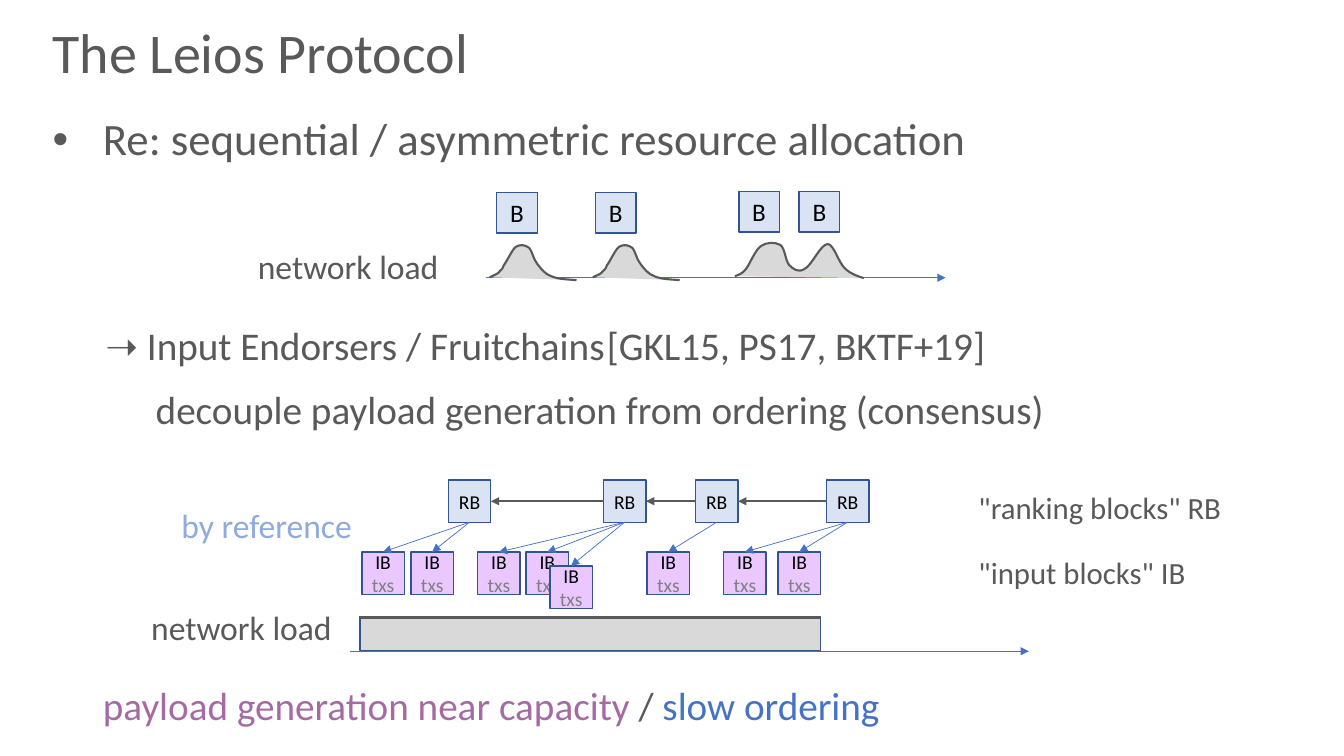
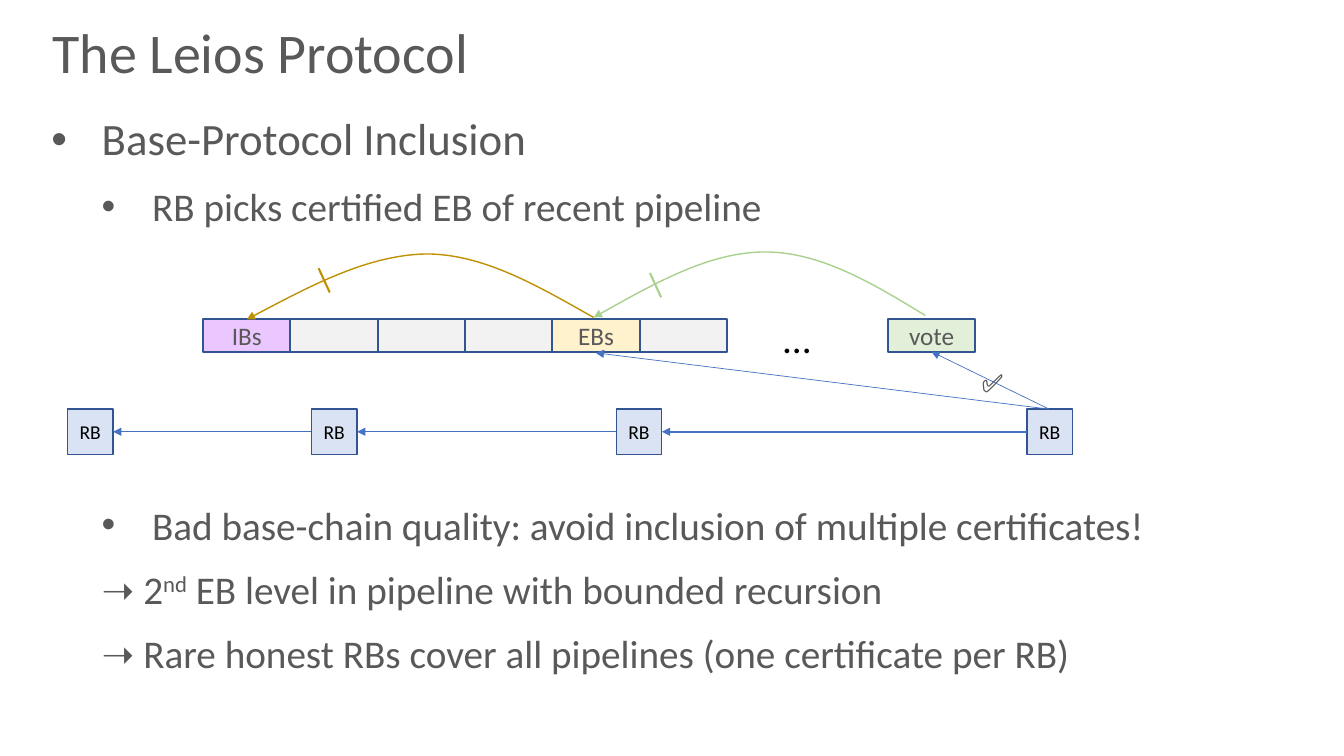
"""Build two slides on the Leios protocol: input endorsers and base-protocol inclusion."""
import pptx
import pptx.dml.color
import pptx.enum.shapes
import pptx.enum.text
import pptx.oxml
import pptx.oxml.ns
import pptx.util
from lxml import etree

Cm = pptx.util.Cm
Pt = pptx.util.Pt
rgb = pptx.dml.color.RGBColor.from_string
qn = pptx.oxml.ns.qn
ALIGN = pptx.enum.text.PP_ALIGN
MIDDLE = pptx.enum.text.MSO_ANCHOR.MIDDLE
RECT = pptx.enum.shapes.MSO_SHAPE.RECTANGLE
STRAIGHT = pptx.enum.shapes.MSO_CONNECTOR.STRAIGHT

GREY, BLACK, BLUE, NAVY = "595959", "000000", "4472C4", "325491"
PALE_BLUE, LILAC, LOAD, EMPTY = "DAE3F3", "EAC7FF", "D9D9D9", "F2F2F2"
GOLD, GREEN = "BF9000", "A9D18E"


def style(r, size, color):
    r.font.name = "Calibri"
    r.font.size = Pt(size)
    r.font.color.rgb = rgb(color)


def stroke(sp, color, width, arrow=False):
    sp.line.color.rgb = rgb(color)
    sp.line.width = Pt(width)
    spPr = sp._element.spPr
    if arrow:
        etree.SubElement(spPr.find(qn("a:ln")), qn("a:tailEnd"), type="triangle")
    etree.SubElement(spPr, qn("a:effectLst"))


prs = pptx.Presentation()
prs.slide_width, prs.slide_height = Cm(33.87), Cm(19.05)

# level, size, left margin, first-line indent, space after, runs
bodies = [
    (1.07, [
        (0, 32, 1.27, -1.27, 115, [("Re: sequential / asymmetric resource allocation", GREY)]),
        (0, 28, 0, 1.33, 11.5,
         [("➝ Input Endorsers / Fruitchains\t[GKL15, PS17, BKTF+19]", GREY)]),
        (1, 28, 2.6, 0, 178.5, [("decouple payload generation from ordering (consensus)", GREY)]),
        (1, 28, 1.27, 0, 18, [("payload generation near capacity ", "A56AA4"), ("/ ", GREY),
                              ("slow ordering", BLUE)]),
    ]),
    (1.04, [
        (0, 32, 1.27, -1.27, 12, [("Base-Protocol Inclusion", GREY)]),
        (1, 28, 2.54, -1.27, 194, [("RB picks certified EB of recent pipeline", GREY)]),
        (1, 28, 2.54, -1.27, 12.5,
         [("Bad base-chain quality: avoid inclusion of multiple certificates!", GREY)]),
        (1, 28, 1.27, 0, 12, [("➝ 2", GREY), ("nd", GREY),
                              (" EB level in pipeline with bounded recursion", GREY)]),
        (1, 28, 1.27, 0, 12,
         [("➝ Rare honest RBs cover all pipelines (one certificate per RB)", GREY)]),
    ]),
]

for body_left, body in bodies:
    s = prs.slides.add_slide(prs.slide_layouts[1])
    title, content = s.placeholders
    for sp, left, top, height in ((title, 1.07, 0, 2.8), (content, body_left, 2.82, 16.23)):
        sp.left, sp.top, sp.width, sp.height = Cm(left), Cm(top), Cm(32.8), Cm(height)
        sp.text_frame.word_wrap = True
        sp.text_frame.auto_size = pptx.enum.text.MSO_AUTO_SIZE.NONE
    tf = title.text_frame
    tf.text = "The Leios Protocol"
    tf.vertical_anchor = MIDDLE
    p = tf.paragraphs[0]
    p.alignment = ALIGN.LEFT
    p.line_spacing = 0.9
    style(p.runs[0], 40, GREY)

    tf = content.text_frame
    for i, (level, size, margin, indent, after, runs) in enumerate(body):
        p = tf.add_paragraph() if i else tf.paragraphs[0]
        p.level = level
        pPr = p._p.get_or_add_pPr()
        pPr.set("marL", str(Cm(margin)))
        pPr.set("indent", str(Cm(indent)))
        if indent < 0:
            etree.SubElement(pPr, qn("a:buChar"), char="•")
        else:
            etree.SubElement(pPr, qn("a:buNone"))
            tabs = etree.SubElement(pPr, qn("a:tabLst"))
            etree.SubElement(tabs, qn("a:tab"), pos=str(Cm(21.65)), algn="l")
        p.line_spacing = 1.0 if level else 0.9
        p.space_before, p.space_after = Pt(0), Pt(after)
        for text, color in runs:
            r = p.add_run()
            r.text = text
            style(r, size, color)
            if text == "nd":
                r._r.get_or_add_rPr().set("baseline", "30000")

load, inclusion = prs.slides

ranking = [11.3, 15.21, 17.53, 20.83]
inputs = [(x, 13.91) for x in (9.12, 10.36, 12.04, 13.26, 16.31, 18.24, 19.61)] + [(13.86, 14.26)]
references = [(0, 0), (0, 1), (1, 2), (1, 3), (1, 7), (2, 4), (3, 5), (3, 6)]
chain = [1.7, 7.85, 15.53, 25.88]
pipeline = [("IBs", LILAC), ("", EMPTY), ("", EMPTY), ("", EMPTY), ("EBs", "FFF2CC"), ("", EMPTY)]

hump = [(0, 6.99), (0.11, 6.93), (0.21, 6.91), (0.26, 6.83), (0.33, 6.78), (0.31, 6.78),
        (0.36, 6.68), (0.44, 6.58), (0.56, 6.3), (0.66, 6.22), (0.79, 6.15), (0.89, 6.17),
        (1, 6.25), (1.07, 6.32), (1.1, 6.53), (1.2, 6.65), (1.3, 6.78), (1.4, 6.91),
        (1.55, 6.96), (1.73, 7.04), (1.96, 7.04), (2.19, 7.06)]
double_hump = [(0, 6.96), (0.08, 6.93), (0.18, 6.91), (0.28, 6.78), (0.38, 6.65), (0.51, 6.3),
               (0.66, 6.2), (0.79, 6.1), (1.02, 6.1), (1.14, 6.17), (1.27, 6.25), (1.27, 6.58),
               (1.37, 6.68), (1.47, 6.78), (1.6, 6.88), (1.75, 6.78), (1.93, 6.71), (2.16, 6.15),
               (2.34, 6.15), (2.49, 6.15), (2.62, 6.63), (2.77, 6.76), (2.92, 6.91), (3.1, 6.96),
               (3.25, 7.01)]
eb_arc = [(0, 8), (-1.4, 7.21), (-2.77, 6.4), (-4.22, 6.4), (-5.69, 6.43), (-7.21, 7.24),
          (-8.74, 8.05)]
vote_arc = [(0, 7.95), (-1.33, 7.14), (-2.64, 6.35), (-4.04, 6.35), (-5.44, 6.35),
            (-6.91, 7.19), (-8.36, 8)]

boxes = [(load, x, y, 1.02, 1.02, PALE_BLUE, 1, "B", 18, BLACK)
         for x, y in ((12.52, 4.85), (15.01, 4.85), (18.62, 4.83), (20.14, 4.83))]
boxes += [(load, x, y, 1.07, 1.07, LILAC, 1, "IB\ntxs", 14, BLACK) for x, y in inputs]
boxes += [(load, x, 12.1, 1.07, 1.07, PALE_BLUE, 1, "RB", 14, BLACK) for x in ranking]
boxes += [(load, 9.07, 15.54, 11.61, 0.86, LOAD, 1, "", 14, BLACK)]
boxes += [(inclusion, 5.12 + 2.2 * i, 8.03, 2.2, 0.84, fill, 1.5, text, 18, GREY)
          for i, (text, fill) in enumerate(pipeline)]
boxes += [(inclusion, 22.38, 8.03, 2.2, 0.84, "E2F0D9", 1.5, "vote", 18, GREY)]
boxes += [(inclusion, x, 10.31, 1.15, 1.15, PALE_BLUE, 1, "RB", 14, BLACK) for x in chain]

lines = [(load, 12.24, 7, 23.83, 7, BLUE, 0.5, True),
         (load, 8.81, 16.41, 25.93, 16.41, BLUE, 0.5, True),
         (load, 9.07, 15.57, 20.68, 15.57, GREY, 2.25, False),
         (inclusion, 26.44, 10.31, 15.01, 8.89, BLUE, 0.5, True),
         (inclusion, 26.44, 10.31, 23.47, 8.86, BLUE, 0.5, True),
         (inclusion, 8.03, 6.76, 8.31, 7.37, GOLD, 1.5, False),
         (inclusion, 16.38, 6.88, 16.66, 7.49, GREEN, 1.5, False)]
lines += [(load, right, 12.63, left + 1.07, 12.63, GREY, 1.25, True)
          for left, right in zip(ranking, ranking[1:])]
lines += [(load, ranking[rb] + 0.53, 13.16, inputs[ib][0] + 0.53, inputs[ib][1], BLUE, 0.5, True)
          for rb, ib in references]
lines += [(inclusion, right, 10.88, left + 1.15, 10.88, BLUE, width, True)
          for left, right, width in zip(chain, chain[1:], (0.5, 0.5, 1.25))]

curves = [(load, 12.34, hump, LOAD, GREY, 1.5), (load, 14.94, hump, LOAD, GREY, 1.5),
          (load, 18.52, double_hump, LOAD, GREY, 1.5),
          (inclusion, 14.96, eb_arc, None, GOLD, 1),
          (inclusion, 23.32, vote_arc, None, GREEN, 1)]

labels = [(load, 6.25, 6.07, 5.92, 1.27, "network load", 24, GREY),
          (load, 24.41, 12.19, 7.34, 1.19, "\"ranking blocks\" RB", 22, GREY),
          (load, 24.41, 13.82, 7.34, 1.19, "\"input blocks\" IB", 22, GREY),
          (load, 4.32, 12.6, 5.82, 1.27, "by reference", 24, "8FAADC"),
          (load, 3.56, 15.16, 5.44, 1.27, "network load", 24, GREY),
          (inclusion, 19.46, 7.8, 1.65, 1.45, "...", 28, BLACK),
          (inclusion, 24.49, 9.14, 1.2, 0.89, "✅", 18, GREY)]

for s, x, y, w, h, fill, width, text, size, color in boxes:
    sp = s.shapes.add_shape(RECT, Cm(x), Cm(y), Cm(w), Cm(h))
    sp.fill.solid()
    sp.fill.fore_color.rgb = rgb(fill)
    stroke(sp, NAVY, width)
    tf = sp.text_frame
    tf.margin_left = tf.margin_right = 0
    tf.vertical_anchor = MIDDLE
    tf.text = text
    for p in tf.paragraphs:
        p.alignment = ALIGN.CENTER
        for r in p.runs:
            style(r, size, "808080" if r.text == "txs" else color)

for s, x1, y1, x2, y2, color, width, arrow in lines:
    stroke(s.shapes.add_connector(STRAIGHT, Cm(x1), Cm(y1), Cm(x2), Cm(y2)), color, width, arrow)

for s, x, points, fill, color, width in curves:
    vertices = [(Cm(x + dx), Cm(y)) for dx, y in points]
    outline = s.shapes.build_freeform(*vertices[0])
    outline.add_line_segments(vertices[1:], close=False)
    sp = outline.convert_to_shape()
    segments = list(sp._element.iter(qn("a:lnTo")))
    for i in range(0, len(segments), 3):
        bezier = etree.SubElement(segments[i].getparent(), qn("a:cubicBezTo"))
        for segment in segments[i:i + 3]:
            bezier.append(segment[0])
            segment.getparent().remove(segment)
    if fill:
        sp.fill.solid()
        sp.fill.fore_color.rgb = rgb(fill)
    else:
        sp.fill.background()
    stroke(sp, color, width, arrow=not fill)

for s, x, y, w, h, text, size, color in labels:
    tf = s.shapes.add_textbox(Cm(x), Cm(y), Cm(w), Cm(h)).text_frame
    tf.word_wrap = True
    tf.text = text
    style(tf.paragraphs[0].runs[0], size, color)

prs.save("out.pptx")
